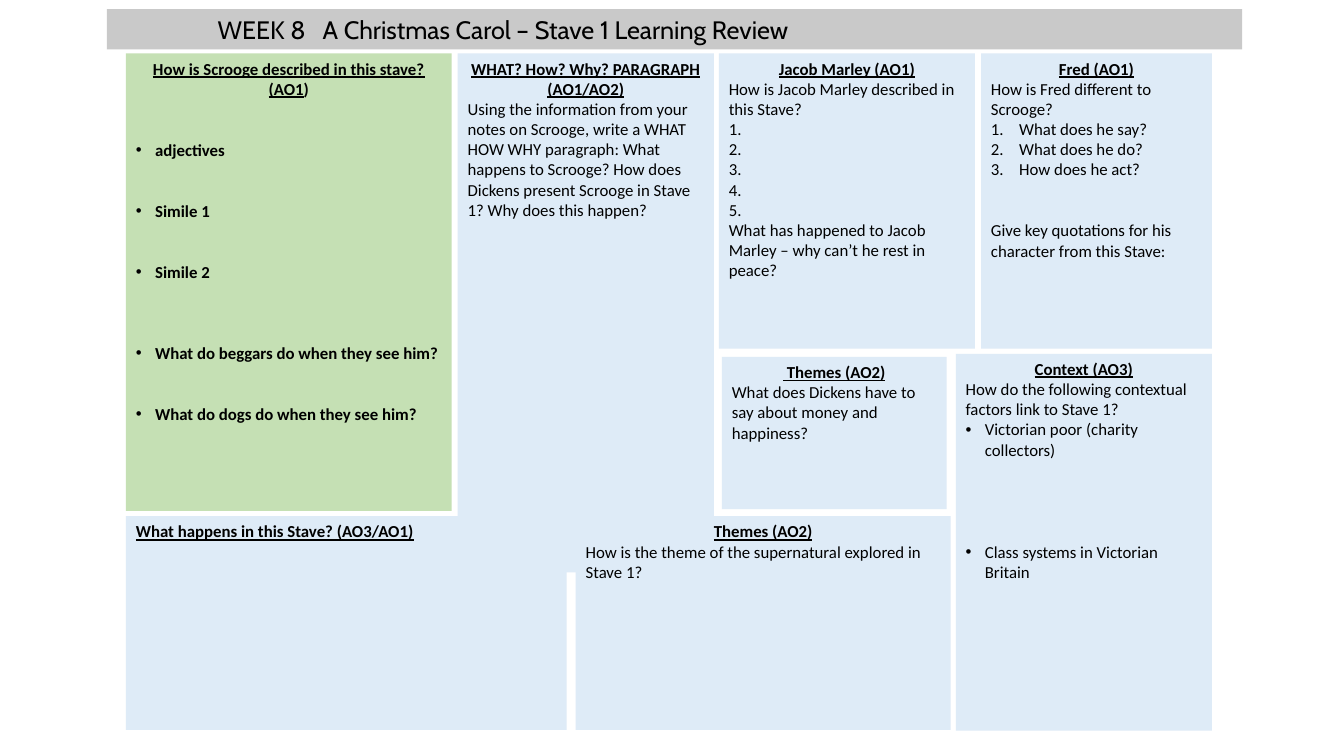
from dataclasses import dataclass

from lxml import etree
from pptx import Presentation
from pptx import util as u
from pptx.dml.color import RGBColor
from pptx.enum import shapes, text
from pptx.oxml import ns


@dataclass(frozen=True)
class Theme:
    banner: str = "C9C9C9"
    green: str = "C5E0B4"
    blue: str = "DEEBF7"
    ink: str = "000000"
    title_font: str = "Cabin"
    body_font: str = "Calibri"
    title_size: float = 18
    body_size: float = 12
    line_height: float = 14.6
    bullet_indent: float = 0.19
    number_indent: float = 0.28


class Worksheet:
    def __init__(self, slide, theme):
        self.slide = slide
        self.theme = theme

    def box(self, left, top, width, height, fill=None):
        lengths = [u.Inches(value) for value in (left, top, width, height)]
        shape = self.slide.shapes.add_shape(shapes.MSO_SHAPE.RECTANGLE, *lengths)
        shape.shadow.inherit = False
        shape.fill.solid()
        shape.fill.fore_color.rgb = RGBColor.from_string(fill or self.theme.blue)
        shape.line.fill.background()
        shape.text_frame.word_wrap = True
        shape.text_frame.vertical_anchor = text.MSO_ANCHOR.TOP
        return shape.text_frame

    def style(self, run, font=None, size=None, bold=False, underline=False):
        run.font.name = font or self.theme.body_font
        run.font.size = u.Pt(size or self.theme.body_size)
        run.font.color.rgb = RGBColor.from_string(self.theme.ink)
        run.font.bold = bold
        run.font.underline = underline

    def banner(self, week, title):
        frame = self.box(1.06, 0.09, 11.26, 0.4, self.theme.banner)
        frame.margin_left = u.Inches(1.1)
        frame.vertical_anchor = text.MSO_ANCHOR.MIDDLE
        paragraph = frame.paragraphs[0]
        paragraph.text = f"{week}\t{title}"
        paragraph.alignment = text.PP_ALIGN.LEFT
        tabs = etree.SubElement(paragraph._p.get_or_add_pPr(), ns.qn("a:tabLst"))
        etree.SubElement(tabs, ns.qn("a:tab"), pos=str(u.Inches(1.04)), algn="l")
        for run in paragraph.runs:
            self.style(run, self.theme.title_font, self.theme.title_size)

    def heading(self, frame, words, plain_end="", centred=True):
        paragraph = frame.paragraphs[0]
        paragraph.text = words
        paragraph.alignment = text.PP_ALIGN.CENTER if centred else text.PP_ALIGN.LEFT
        self.style(paragraph.runs[0], bold=True, underline=True)
        if plain_end:
            run = paragraph.add_run()
            run.text = plain_end
            self.style(run, bold=True)

    def line(self, frame, words, gap=0, bold=False):
        paragraph = frame.add_paragraph()
        paragraph.text = words
        paragraph.alignment = text.PP_ALIGN.LEFT
        paragraph.space_before = u.Pt(gap * self.theme.line_height)
        self.style(paragraph.runs[0], bold=bold)
        return paragraph

    def hang(self, paragraph, indent):
        properties = paragraph._p.get_or_add_pPr()
        properties.set("marL", str(u.Inches(indent)))
        properties.set("indent", str(-u.Inches(indent)))
        return properties

    def bullet(self, frame, words, gap=0, bold=False):
        paragraph = self.line(frame, words, gap, bold)
        properties = self.hang(paragraph, self.theme.bullet_indent)
        etree.SubElement(properties, ns.qn("a:buFont"), typeface="Arial")
        etree.SubElement(properties, ns.qn("a:buChar"), char="•")

    def numbers(self, frame, items):
        for item in items:
            properties = self.hang(self.line(frame, item), self.theme.number_indent)
            etree.SubElement(properties, ns.qn("a:buAutoNum"), type="arabicPeriod")


def main():
    presentation = Presentation()
    presentation.slide_width = u.Inches(13.33)
    presentation.slide_height = u.Inches(7.5)
    slide = presentation.slides.add_slide(presentation.slide_layouts[6])
    theme = Theme()
    sheet = Worksheet(slide, theme)

    sheet.banner("WEEK 8", "A Christmas Carol – Stave 1 Learning Review")

    scrooge = sheet.box(1.25, 0.53, 3.23, 4.54, theme.green)
    sheet.heading(scrooge, "How is Scrooge described in this stave? (AO1", ")")
    for words, gap in (
        ("adjectives", 2),
        ("Simile 1", 2),
        ("Simile 2", 2),
        ("What do beggars do when they see him?", 3),
        ("What do dogs do when they see him?", 2),
    ):
        sheet.bullet(scrooge, words, gap, bold=True)

    paragraph_task = sheet.box(4.54, 0.53, 2.54, 5.15)
    sheet.heading(paragraph_task, "WHAT? How? Why? PARAGRAPH (AO1/AO2)")
    sheet.line(
        paragraph_task,
        "Using the information from your notes on Scrooge, write a WHAT HOW WHY "
        "paragraph: What happens to Scrooge? How does Dickens present Scrooge in "
        "Stave 1? Why does this happen?",
    )

    marley = sheet.box(7.13, 0.53, 2.54, 2.93)
    sheet.heading(marley, "Jacob Marley (AO1)")
    sheet.line(marley, "How is Jacob Marley described in this Stave?")
    sheet.numbers(marley, [" "] * 5)
    sheet.line(marley, "What has happened to Jacob Marley – why can’t he rest in peace?")

    fred = sheet.box(9.73, 0.53, 2.29, 2.93)
    sheet.heading(fred, "Fred (AO1)")
    sheet.line(fred, "How is Fred different to Scrooge?")
    sheet.numbers(fred, ["What does he say?", "What does he do?", "How does he act?"])
    sheet.line(fred, "Give key quotations for his character from this Stave:", gap=2)

    events = sheet.box(1.25, 5.12, 4.37, 2.12)
    sheet.heading(events, "What happens in this Stave? (AO3/AO1)", centred=False)

    context = sheet.box(9.48, 3.51, 2.54, 3.74)
    sheet.heading(context, "Context (AO3)")
    sheet.line(context, "How do the following contextual factors link to Stave 1?")
    sheet.bullet(context, "Victorian poor (charity collectors)")
    sheet.bullet(context, "Class systems in Victorian Britain", gap=4)

    money = sheet.box(7.16, 3.54, 2.23, 1.51)
    sheet.heading(money, " Themes (AO2)")
    sheet.line(money, "What does Dickens have to say about money and happiness?")

    supernatural = sheet.box(5.71, 5.12, 3.72, 2.12)
    sheet.heading(supernatural, "Themes (AO2)")
    sheet.line(supernatural, "How is the theme of the supernatural explored in Stave 1?")

    presentation.save("out.pptx")


if __name__ == "__main__":
    main()
